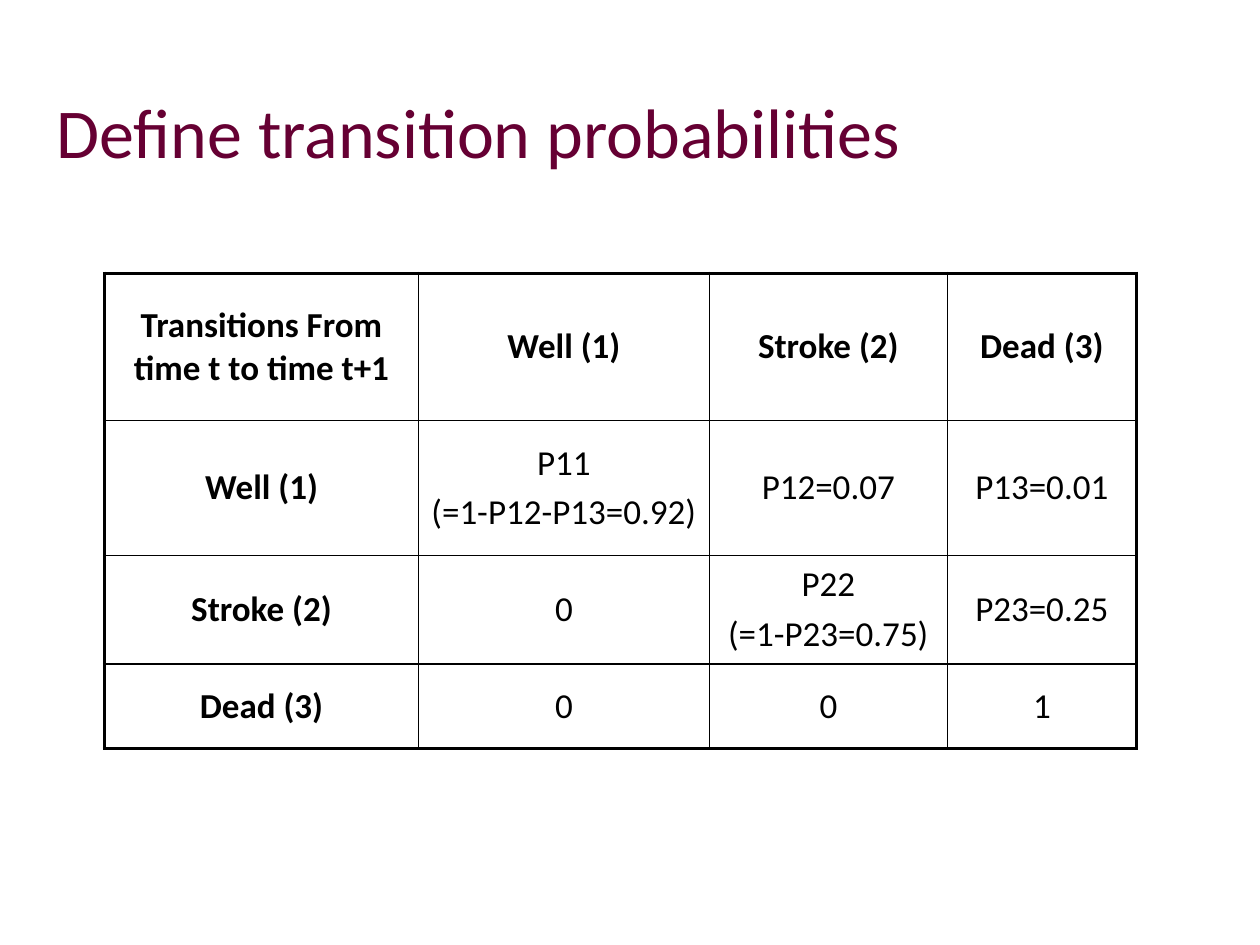
"""Build a slide with a table of Markov transition probabilities."""
from pptx import Presentation
from pptx.dml.color import RGBColor
from pptx.enum import text
from pptx.oxml import ns, xmlchemy
from pptx.util import Pt

BLACK = RGBColor(0x00, 0x00, 0x00)
MAROON = RGBColor(0x66, 0x00, 0x33)

COLUMN_WIDTHS = [179.3, 166.3, 136, 108]
ROW_HEIGHTS = [84.2, 77, 62, 48.2]
TRANSITIONS = [
    ["Transitions From time t to time t+1", "Well (1)", "Stroke (2)", "Dead (3)"],
    ["Well (1)", "P11\n(=1-P12-P13=0.92)", "P12=0.07", "P13=0.01"],
    ["Stroke (2)", "0", "P22\n(=1-P23=0.75)", "P23=0.25"],
    ["Dead (3)", "0", "0", "1"],
]


def write_text(frame, content, font="Calibri", size=20, color=BLACK, bold=False,
               align=text.PP_ALIGN.CENTER, gap=4):
    """Write each line of content as one formatted paragraph."""
    for index, line in enumerate(content.split("\n")):
        para = frame.add_paragraph() if index else frame.paragraphs[0]
        para.alignment = align
        para.space_before = Pt(gap if index else 0)
        span = para.add_run()
        span.text = line
        span.font.name = font
        span.font.size = Pt(size)
        span.font.bold = bold
        span.font.color.rgb = color


class SlideBuilder:
    """Hold the style and the current slide."""

    inner_line = 1
    outer_line = 2.25

    def __init__(self, deck):
        """Add a title-only page to the deck."""
        self.page = deck.slides.add_slide(deck.slide_layouts[5])

    def title(self, content, left, top, width, height):
        """Place and fill the title."""
        box = self.page.shapes.title
        box.left, box.top, box.width, box.height = map(Pt, (left, top, width, height))
        frame = box.text_frame
        frame.word_wrap = True
        frame.auto_size = text.MSO_AUTO_SIZE.NONE
        frame.vertical_anchor = text.MSO_ANCHOR.BOTTOM
        write_text(frame, content, size=40, color=MAROON, align=text.PP_ALIGN.LEFT)

    def border(self, cell, side, width):
        """Draw one side of a cell border."""
        line = xmlchemy.OxmlElement(f"a:ln{side}")
        line.set("w", str(Pt(width)))
        fill = xmlchemy.OxmlElement("a:solidFill")
        color = xmlchemy.OxmlElement("a:srgbClr")
        color.set("val", str(BLACK))
        fill.append(color)
        line.append(fill)
        cell._tc.get_or_add_tcPr().append(line)

    def table(self, rows, left, top, widths, heights):
        """Add a table with bold headings and a heavy outer frame."""
        last_row, last_column = len(heights) - 1, len(widths) - 1
        table = self.page.shapes.add_table(
            len(heights), len(widths), Pt(left), Pt(top),
            Pt(sum(widths)), Pt(sum(heights))).table
        table.first_row = table.horz_banding = False
        for column, width in zip(table.columns, widths):
            column.width = Pt(width)
        for row, height in zip(table.rows, heights):
            row.height = Pt(height)
        for r, row in enumerate(rows):
            for c, content in enumerate(row):
                cell = table.cell(r, c)
                edges = {"L": c == 0, "R": c == last_column,
                         "T": r == 0, "B": r == last_row}
                for side, outer in edges.items():
                    self.border(cell, side, self.outer_line if outer else self.inner_line)
                cell.fill.background()
                cell.vertical_anchor = text.MSO_ANCHOR.MIDDLE
                write_text(cell.text_frame, content, bold=r == 0 or c == 0)


def main():
    """Create and save the deck."""
    deck = Presentation()
    deck.slide_width, deck.slide_height = Pt(720), Pt(540)
    builder = SlideBuilder(deck)
    builder.table(TRANSITIONS, 59.8, 156.2, COLUMN_WIDTHS, ROW_HEIGHTS)
    builder.title("Define transition probabilities", 25.2, 0, 594, 102.2)
    deck.save("out.pptx")


if __name__ == "__main__":
    main()
